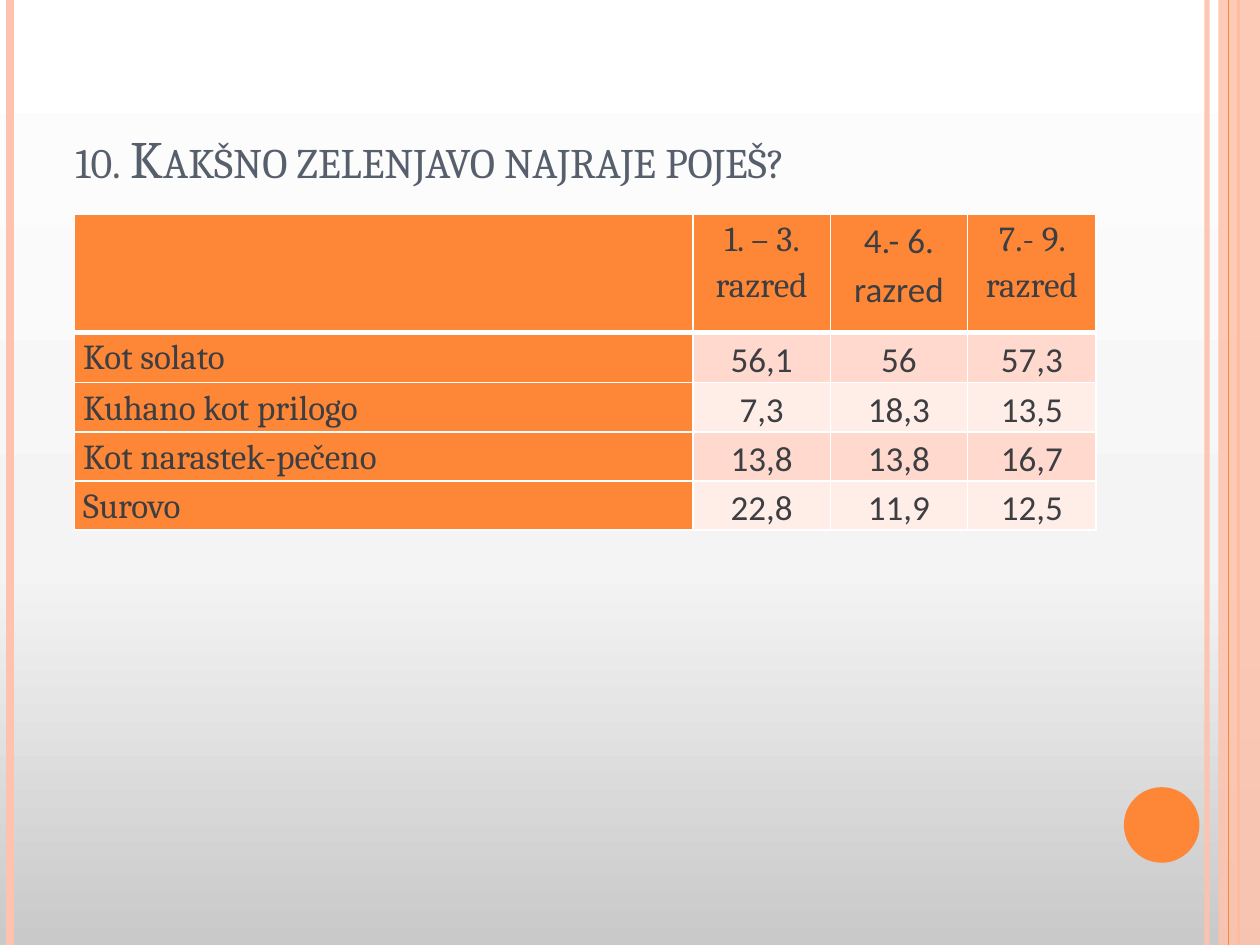
from lxml import etree
from pptx import Presentation
from pptx import util as u
from pptx.dml.color import RGBColor
from pptx.enum import shapes, text
from pptx.oxml import parse_xml
from pptx.oxml.ns import nsdecls, qn

THEME = {
    "orange": "FE8637", "peach": "FEC3AE", "title": "575F6D", "ink": "3C3E42",
    "bands": ("FFD9CE", "FFEDE8"), "border": "FFFFFF",
    "background": ((0, "C9C9C9"), (40, "F4F4F4"), (100, "FFFFFF")),
    "serif": "Cambria", "sans": "Calibri", "title_size": 30, "table_size": 20,
}

deck = Presentation()
deck.slide_width, deck.slide_height = u.Inches(10), u.Inches(7.5)
W, H = deck.slide_width, deck.slide_height
page = deck.slides.add_slide(deck.slide_layouts[6])


def write(para, wording, font, size, color):
    span = para.add_run()
    span.text = wording
    span.font.name, span.font.size, span.font.bold = font, u.Pt(size), False
    span.font.color.rgb = RGBColor.from_string(color)
    return span


def set_alpha(fill_parent, percent):
    color = next(fill_parent.iter(qn("a:srgbClr")))
    etree.SubElement(color, qn("a:alpha")).set("val", str(percent * 1000))


# Background gradient, running from the bottom up
background = page.background.fill
background.gradient()
stops = "".join(
    f'<a:gs pos="{place * 1000}"><a:srgbClr val="{color}"/></a:gs>'
    for place, color in THEME["background"])
old_gradient = next(page.background._cSld.iter(qn("a:gradFill")))
old_gradient.getparent().replace(old_gradient, parse_xml(
    f'<a:gradFill {nsdecls("a")} rotWithShape="1"><a:gsLst>{stops}</a:gsLst>'
    '<a:lin ang="16200000" scaled="0"/></a:gradFill>'))

# Vertical stripes and the side band: share of width, color, points, opacity
stripes = [
    (0.958, "peach", 3, 93), (0.008, "peach", 4.5, 100),
    (0.983, "orange", 1.5, 100), ("band", "peach", 0, 87),
    (0.975, "orange", 0.75, 100),
]
for place, color, points, opacity in stripes:
    if place == "band":
        stripe = page.shapes.add_shape(
            shapes.MSO_SHAPE.RECTANGLE, int(W * 0.967), 0, int(W * 0.033), H)
        stripe.shadow.inherit = False
        stripe.fill.solid()
        stripe.fill.fore_color.rgb = RGBColor.from_string(THEME[color])
        stripe.line.fill.background()
    else:
        stripe = page.shapes.add_connector(
            shapes.MSO_CONNECTOR.STRAIGHT, int(W * place), 0, int(W * place), H)
        stripe.line.color.rgb = RGBColor.from_string(THEME[color])
        stripe.line.width = u.Pt(points)
        etree.SubElement(stripe._element.spPr, qn("a:effectLst"))
    if opacity < 100:
        set_alpha(stripe._element.spPr, opacity)

# Corner disc
disc = page.shapes.add_shape(
    shapes.MSO_SHAPE.OVAL, int(W * 0.892), int(H * 0.833), int(W * 0.06), int(W * 0.06))
disc.shadow.inherit = False
disc.fill.solid()
disc.fill.fore_color.rgb = RGBColor.from_string(THEME["orange"])
disc.line.fill.background()

# Title
box = page.shapes.add_textbox(int(W * 0.05), int(H * 0.04), int(W * 0.817), int(H * 0.167))
box.text_frame.word_wrap = True
box.text_frame.vertical_anchor = text.MSO_ANCHOR.BOTTOM
span = write(box.text_frame.paragraphs[0], "10. Kakšno zelenjavo najraje poješ?",
             THEME["serif"], THEME["title_size"], THEME["title"])
span.font._element.set("cap", "small")

# Table of answers by school grade
rows = [
    ("", "1. – 3. razred", "4.- 6.\nrazred", "7.- 9. razred"),
    ("Kot solato", "56,1", "56", "57,3"),
    ("Kuhano kot prilogo", "7,3", "18,3", "13,5"),
    ("Kot narastek-pečeno", "13,8", "13,8", "16,7"),
    ("Surovo", "22,8", "11,9", "12,5"),
]
column_widths = (4.91, 1.09, 1.09, 1.02)
row_heights = (0.94, 0.4, 0.39, 0.39, 0.39)
table = page.shapes.add_table(
    len(rows), len(column_widths), int(W * 0.059), int(H * 0.2263),
    u.Inches(sum(column_widths)), u.Inches(sum(row_heights))).table
for column, width in zip(table.columns, column_widths):
    column.width = u.Inches(width)

for r, (values, height) in enumerate(zip(rows, row_heights)):
    table.rows[r].height = u.Inches(height)
    for c, value in enumerate(values):
        cell = table.cell(r, c)
        cell.margin_left = cell.margin_right = u.Inches(0.07)
        cell.margin_top = cell.margin_bottom = 0

        # White borders, heavier between the header and the body
        for side in "LRTB":
            heavy = (r, side) in ((0, "B"), (1, "T"))
            cell._tc.get_or_add_tcPr().append(parse_xml(
                f'<a:ln{side} {nsdecls("a")} w="{u.Pt(3 if heavy else 1)}"><a:solidFill>'
                f'<a:srgbClr val="{THEME["border"]}"/></a:solidFill></a:ln{side}>'))
        labelled = r == 0 or c == 0
        cell.fill.solid()
        cell.fill.fore_color.rgb = RGBColor.from_string(
            THEME["orange"] if labelled else THEME["bands"][(r - 1) % 2])

        # The middle header is set in the sans face, like the figures
        font = THEME["serif"] if labelled and (r, c) != (0, 2) else THEME["sans"]
        for i, wording in enumerate(value.split("\n") if value else ()):
            para = cell.text_frame.add_paragraph() if i else cell.text_frame.paragraphs[0]
            para.line_spacing = 1.15
            para.alignment = text.PP_ALIGN.CENTER if c else text.PP_ALIGN.LEFT
            write(para, wording, font, THEME["table_size"], THEME["ink"])

deck.save("out.pptx")
